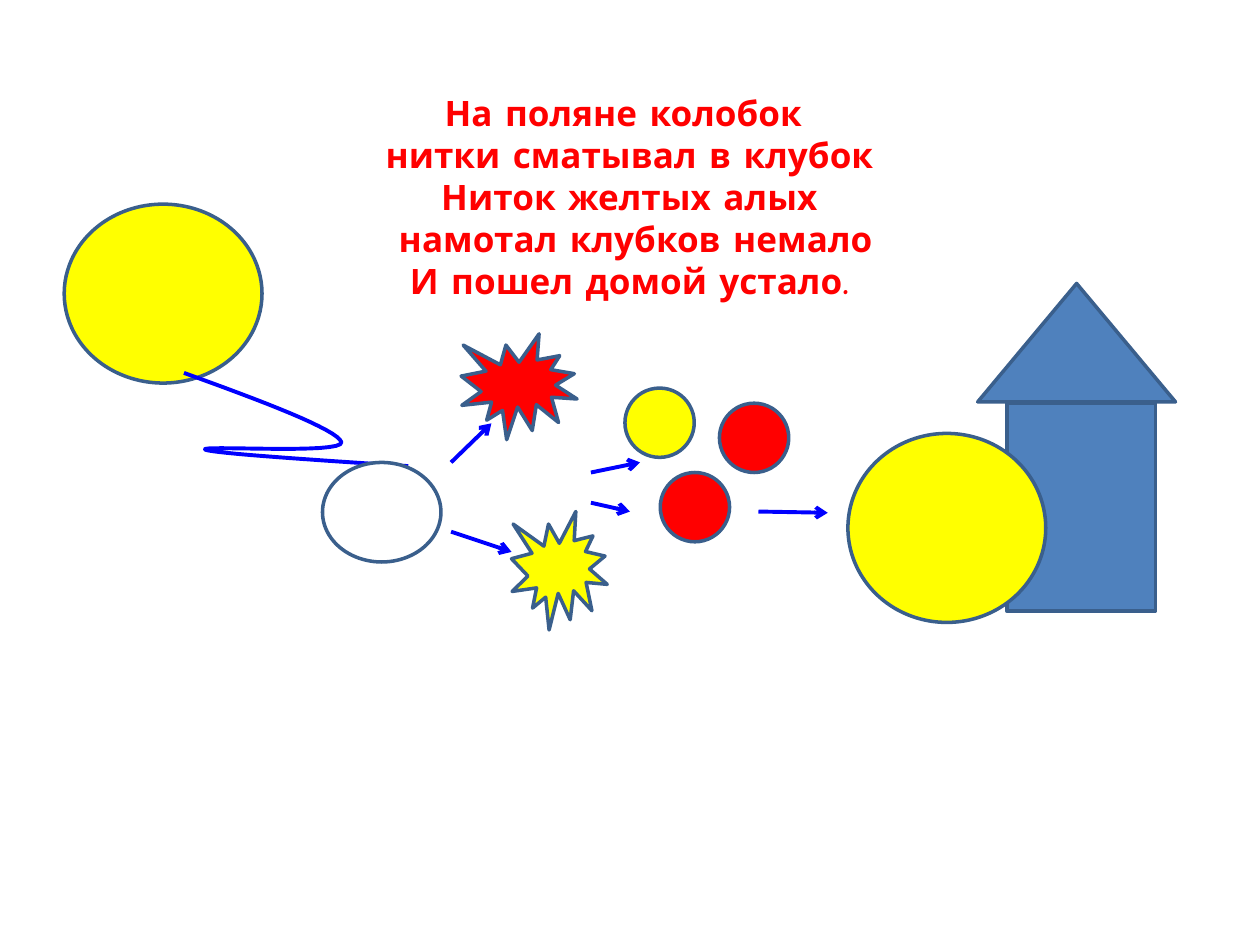
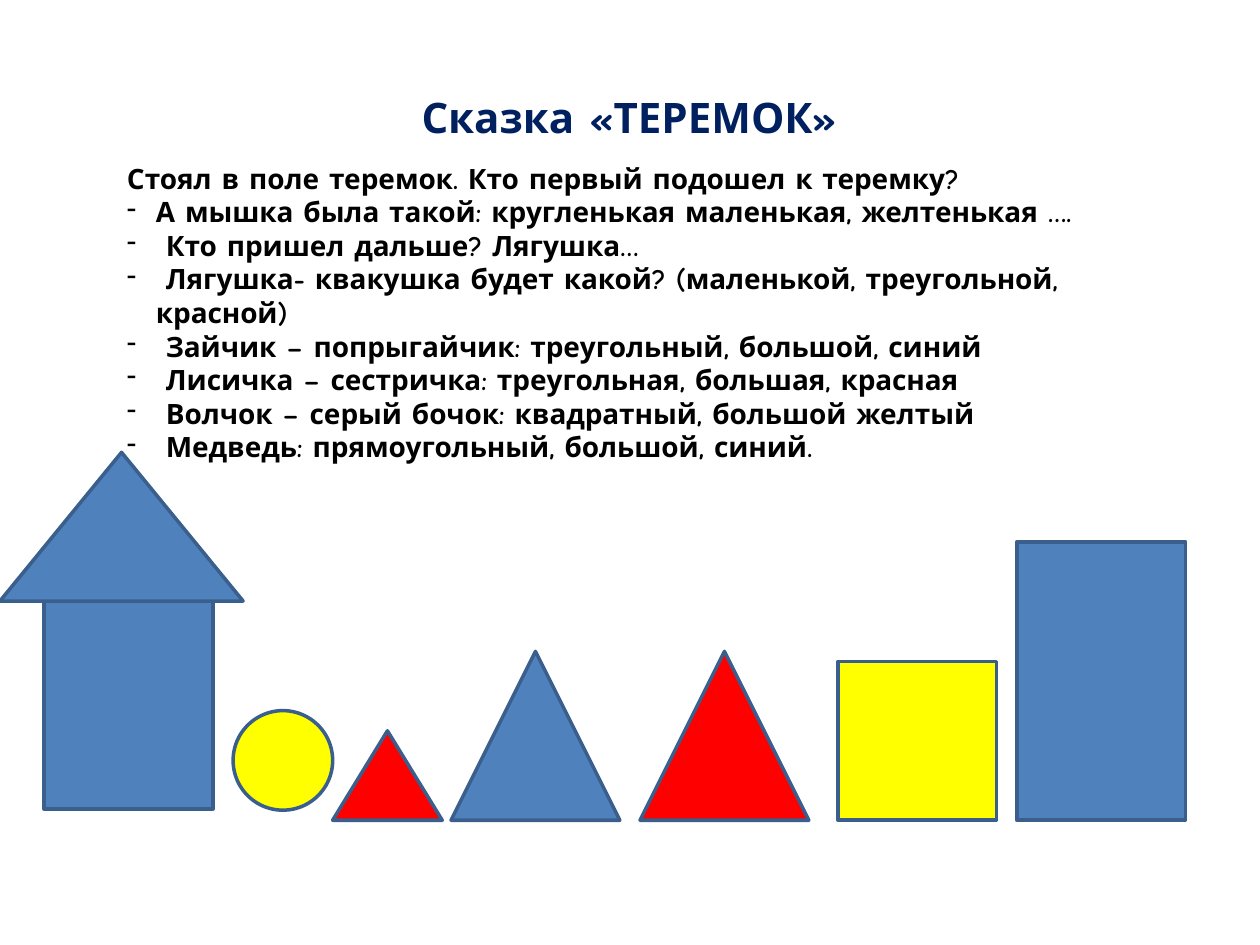
from lxml import etree
from pptx import Presentation
from pptx import util as u
from pptx.dml.color import RGBColor
from pptx.enum import shapes, text
from pptx.oxml.ns import qn

# Shared look
RED = RGBColor(0xFF, 0x00, 0x00)
YELLOW = RGBColor(0xFF, 0xFF, 0x00)
BLUE = RGBColor(0x4F, 0x81, 0xBD)
WHITE = RGBColor(0xFF, 0xFF, 0xFF)
BLACK = RGBColor(0x00, 0x00, 0x00)
NAVY = RGBColor(0x00, 0x20, 0x60)
OUTLINE = RGBColor(0x3A, 0x5F, 0x8C)
THREAD = RGBColor(0x00, 0x00, 0xFF)
FONT = "Comic Neue"

# Grid of 100 columns and 75 rows
COLS, ROWS = 100, 75
CELL = u.Inches(0.1)
HEAD_LEFT, HEAD_TOP, HEAD_WIDTH = 16.9, 6.8, 66.1

OVAL = shapes.MSO_SHAPE.OVAL
RECT = shapes.MSO_SHAPE.RECTANGLE
TRIANGLE = shapes.MSO_SHAPE.ISOSCELES_TRIANGLE
BURST = shapes.MSO_SHAPE.EXPLOSION1

VERSE = [
    "На поляне колобок ",
    "нитки сматывал в клубок",
    "Ниток желтых алых",
    " намотал клубков немало",
    "И пошел домой устало.",
]
TALE_TITLE = "Сказка «ТЕРЕМОК»"
TALE_INTRO = "Стоял в поле теремок. Кто первый подошел к теремку?"
TALE_LINES = [
    "А мышка была такой: кругленькая маленькая, желтенькая ….",
    " Кто пришел дальше? Лягушка…",
    " Лягушка- квакушка будет какой? (маленькой, треугольной, красной)",
    " Зайчик – попрыгайчик: треугольный, большой, синий",
    " Лисичка – сестричка: треугольная, большая, красная",
    " Волчок – серый бочок: квадратный, большой желтый",
    " Медведь: прямоугольный, большой, синий.",
]


def grid(*cells):
    return [round(c * CELL) for c in cells]


def add_figure(s, kind, left, top, width, height, colour):
    sp = s.shapes.add_shape(kind, *grid(left, top, width, height))
    sp.shadow.inherit = False
    sp.fill.solid()
    sp.fill.fore_color.rgb = colour
    sp.line.color.rgb = OUTLINE
    sp.line.width = u.Pt(2)
    return sp


def add_house(s, wall, roof):
    add_figure(s, RECT, *wall, BLUE)
    add_figure(s, TRIANGLE, *roof, BLUE)


def style_thread(line):
    line.color.rgb = THREAD
    line.width = u.Pt(2.25)


def add_arrow(s, x1, y1, x2, y2):
    c = s.shapes.add_connector(shapes.MSO_CONNECTOR.STRAIGHT, *grid(x1, y1, x2, y2))
    style_thread(c.line)
    etree.SubElement(c.line._get_or_add_ln(), qn("a:tailEnd"), type="arrow")
    etree.SubElement(c._element.spPr, qn("a:effectLst"))


def bezier(p0, p1, p2, p3, steps=16):
    for i in range(1, steps + 1):
        t = i / steps
        k = 1 - t
        yield tuple(k**3 * a + 3 * k * k * t * b + 3 * k * t * t * c + t**3 * d
                    for a, b, c, d in zip(p0, p1, p2, p3))


def add_curve(s, start, bends):
    pen = s.shapes.build_freeform(*grid(*start))
    for bend in bends:
        pen.add_line_segments([grid(*pt) for pt in bezier(start, *bend)], close=False)
        start = bend[-1]
    sp = pen.convert_to_shape()
    sp.shadow.inherit = False
    sp.fill.background()
    style_thread(sp.line)


def write(p, words, size, colour, align):
    p.alignment = align
    r = p.add_run()
    r.text = words
    r.font.size = u.Pt(size)
    r.font.name = FONT
    r.font.bold = True
    r.font.color.rgb = colour


def add_bullet(p):
    pPr = p._p.get_or_add_pPr()
    pPr.set("marL", str(u.Inches(0.23)))
    pPr.set("indent", str(u.Inches(-0.23)))
    etree.SubElement(pPr, qn("a:buChar"), char="-")


def add_text(s, box, lines, size, colour, align, first_bullet=None):
    tf = s.shapes.add_textbox(*grid(*box)).text_frame
    tf.word_wrap = True
    tf.auto_size = text.MSO_AUTO_SIZE.SHAPE_TO_FIT_TEXT
    for i, words in enumerate(lines):
        p = tf.add_paragraph() if i else tf.paragraphs[0]
        if first_bullet is not None and i >= first_bullet:
            add_bullet(p)
        write(p, words, size, colour, align)


def set_title(s, words, size, colour):
    sp = s.shapes.title
    sp.left, sp.top, sp.width, sp.height = grid(HEAD_LEFT, HEAD_TOP, HEAD_WIDTH, 5)
    tf = sp.text_frame
    tf.word_wrap = True
    tf.vertical_anchor = text.MSO_ANCHOR.TOP
    write(tf.paragraphs[0], words, size, colour, text.PP_ALIGN.CENTER)


def build_kolobok(prs):
    s = prs.slides.add_slide(prs.slide_layouts[6])
    add_text(s, (HEAD_LEFT, HEAD_TOP, HEAD_WIDTH, 17.8), VERSE, 20, RED,
             text.PP_ALIGN.CENTER)

    # Kolobok and the small balls
    add_figure(s, OVAL, 5.1, 16.2, 15.7, 14.2, YELLOW)
    for left, top, colour in [(49.6, 30.8, YELLOW), (52.4, 37.5, RED), (57.1, 32, RED)]:
        add_figure(s, OVAL, left, top, 5.5, 5.5, colour)

    # Thread leading to the white ball
    add_curve(s, (14.6, 29.6), [
        ((20.7, 31.8), (26.8, 34.1), (27.1, 35.1)),
        ((27.3, 36.1), (15.4, 35.3), (16.3, 35.7)),
        ((17.2, 36), (24.8, 36.5), (32.4, 37)),
    ])
    add_figure(s, OVAL, 25.6, 36.7, 9.4, 7.9, WHITE)

    # Tangled threads
    add_figure(s, BURST, 36.6, 26.5, 9.2, 8.4, RED)
    add_figure(s, BURST, 40.6, 40.6, 7.6, 9.4, YELLOW)

    # Home, with kolobok in front
    add_house(s, wall=(79.9, 32, 11.8, 16.5), roof=(77.6, 22.5, 15.7, 9.4))
    add_figure(s, OVAL, 67.3, 34.4, 15.7, 15, YELLOW)

    # Order of events
    for ends in [(35.8, 36.7, 39, 33.6), (35.8, 42.2, 40.6, 43.8),
                 (46.9, 37.5, 50.8, 36.7), (46.9, 39.9, 50, 40.6),
                 (60.2, 40.6, 65.7, 40.7)]:
        add_arrow(s, *ends)


def build_teremok(prs):
    s = prs.slides.add_slide(prs.slide_layouts[5])
    set_title(s, TALE_TITLE, 24, NAVY)
    add_house(s, wall=(3.5, 47.7, 13.4, 16.5), roof=(0, 35.9, 19.3, 11.8))
    add_text(s, (9.1, 12.3, 85, 22.6), [TALE_INTRO] + TALE_LINES, 16, BLACK,
             text.PP_ALIGN.LEFT, first_bullet=1)

    # Animals standing on the ground: kind, left, width, height, colour
    ground = 65.1
    add_figure(s, OVAL, 18.5, 56.4, 7.9, 7.9, YELLOW)
    for kind, left, width, height, colour in [
        (TRIANGLE, 26.4, 8.7, 7.1, RED),
        (TRIANGLE, 35.8, 13.4, 13.4, BLUE),
        (TRIANGLE, 50.8, 13.4, 13.4, RED),
        (RECT, 66.5, 12.6, 12.6, YELLOW),
        (RECT, 80.7, 13.4, 22.1, BLUE),
    ]:
        add_figure(s, kind, left, ground - height, width, height, colour)


def main():
    prs = Presentation()
    prs.slide_width, prs.slide_height = grid(COLS, ROWS)
    build_kolobok(prs)
    build_teremok(prs)
    prs.save("out.pptx")


if __name__ == "__main__":
    main()
